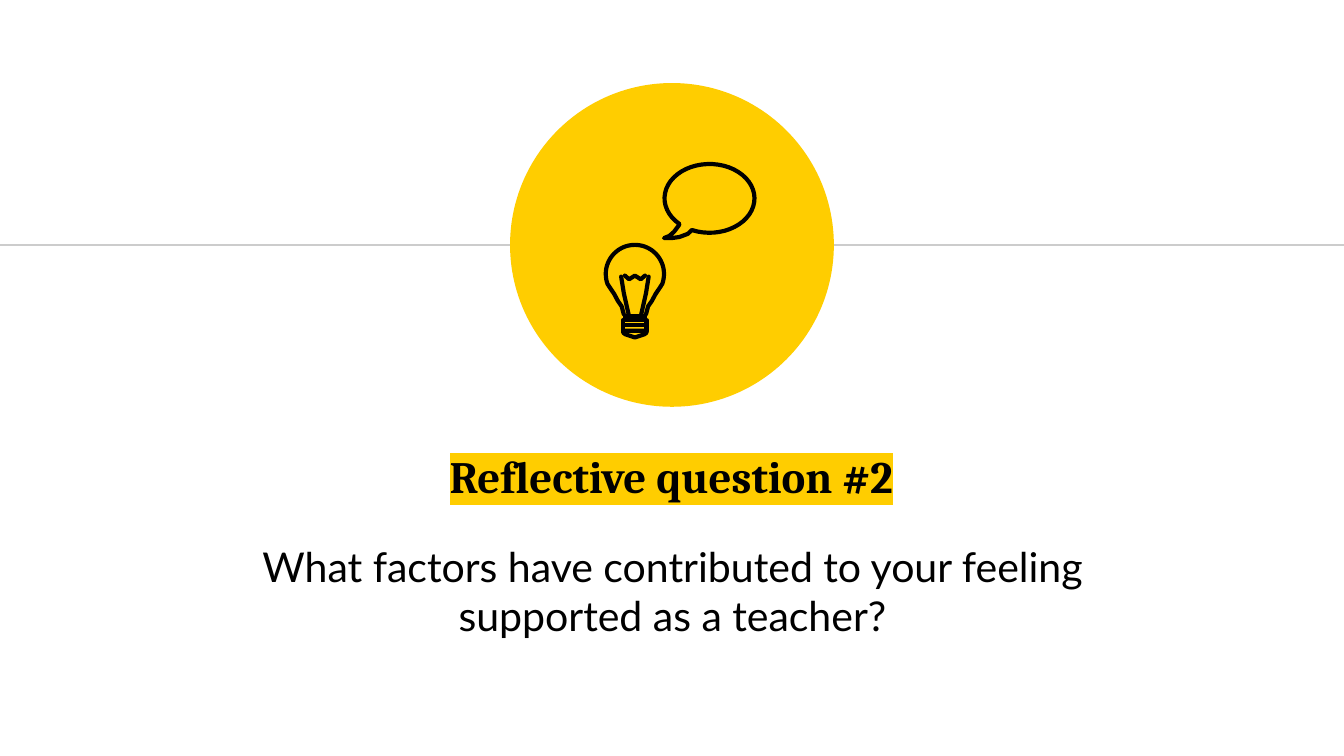
from math import cos, radians, sin

from lxml.etree import SubElement
from pptx import Presentation
from pptx.dml.color import RGBColor
from pptx.enum.shapes import MSO_CONNECTOR, MSO_SHAPE
from pptx.enum.text import MSO_ANCHOR, MSO_AUTO_SIZE, PP_ALIGN
from pptx.oxml.ns import qn
from pptx.util import Cm, Pt

YELLOW = RGBColor(0xFF, 0xCD, 0x00)
BLACK = RGBColor(0x00, 0x00, 0x00)
GREY = RGBColor(0xCC, 0xCC, 0xCC)
CENTRE = 12.7
RULE_TOP = 4.63
BULB_AXIS = 12.0


def arc(centre, radii, first, last, steps=48):
    """Return points along an elliptical arc, with angles in degrees."""
    angles = [radians(first + (last - first) * step / steps) for step in range(steps + 1)]
    return [(centre[0] + radii[0] * cos(angle), centre[1] + radii[1] * sin(angle))
            for angle in angles]


def place(half):
    """Move points given as offsets from the bulb axis onto the slide."""
    return [(BULB_AXIS + offset, top) for offset, top in half]


def mirror(half):
    """Return the points reflected in the bulb axis, in reverse order."""
    return [(-offset, top) for offset, top in reversed(half)]


class SlideBuilder:
    """Holds the style and the current slide."""

    def __init__(self, deck):
        self.slide = deck.slides.add_slide(deck.slide_layouts[0])
        self.shapes = self.slide.shapes

    def text(self, box, area, words, font, size, anchor, bold=False, highlight=None):
        box.left, box.top, box.width, box.height = map(Cm, area)
        frame = box.text_frame
        frame.text = words
        frame.word_wrap = True
        frame.auto_size = MSO_AUTO_SIZE.NONE
        frame.vertical_anchor = anchor
        frame.margin_left = frame.margin_right = Cm(0.25)
        frame.margin_top = frame.margin_bottom = Cm(0.25)
        para = frame.paragraphs[0]
        para.alignment = PP_ALIGN.CENTER
        para.space_before = Pt(0)
        span = para.runs[0]
        span.font.size = Pt(size)
        span.font.bold = bold
        span.font.color.rgb = BLACK
        if highlight:
            marker = SubElement(span.font._element, qn("a:highlight"))
            SubElement(marker, qn("a:srgbClr")).set("val", str(highlight))
        span.font.name = font

    def line(self, start, end, color, width, shapes=None):
        ends = map(Cm, (*start, *end))
        rule = (shapes or self.shapes).add_connector(MSO_CONNECTOR.STRAIGHT, *ends)
        rule.line.color.rgb = color
        rule.line.width = Pt(width)
        SubElement(rule._element.spPr, qn("a:effectLst"))

    def disc(self, centre, diameter, color):
        corner = [Cm(value - diameter / 2) for value in centre]
        disc = self.shapes.add_shape(MSO_SHAPE.OVAL, *corner, Cm(diameter), Cm(diameter))
        disc.shadow.inherit = False
        disc.fill.solid()
        disc.fill.fore_color.rgb = color
        disc.line.fill.background()

    def outline(self, points, close=False, shapes=None):
        corners = [(Cm(left), Cm(top)) for left, top in points]
        builder = (shapes or self.shapes).build_freeform(*corners[0])
        builder.add_line_segments(corners[1:], close=close)
        shape = builder.convert_to_shape()
        shape.shadow.inherit = False
        shape.fill.background()
        shape.line.color.rgb = BLACK
        shape.line.width = Pt(2.25)
        stroke = shape.line._get_or_add_ln()
        stroke.set("cap", "rnd")
        SubElement(stroke, qn("a:round"))

    def bubble(self):
        tail = [(13.0, 4.42), (12.84, 4.48), (12.7, 4.5), (12.55, 4.5),
                (12.65, 4.46), (12.74, 4.38), (12.83, 4.26)]
        self.outline(arc((13.41, 3.75), (0.85, 0.65), 132, 473) + tail, close=True)

    def bulb(self):
        shapes = self.shapes.add_group_shape().shapes
        for top in (6.15, 6.05):
            band = [(-0.22, top), (-0.22, top + 0.1)]
            self.outline(place(band + mirror(band)), True, shapes)
        cap = [(-0.22, 6.25), (-0.22, 6.29), (-0.18, 6.32), (0, 6.38)]
        self.outline(place(cap + mirror(cap[:-1])), True, shapes)
        side = [(-0.21, 5.94), (-0.25, 5.79), (-0.32, 5.69), (-0.39, 5.56), (-0.47, 5.44)]
        dome = arc((0, 5.18), (0.55, 0.55), 160, 380)
        self.outline(place(side + dome + mirror(side)), shapes=shapes)
        leg = [(-0.26, 5.23), (-0.21, 5.54), (-0.12, 5.94)]
        for half in (leg, mirror(leg)):
            self.outline(place(half), shapes=shapes)
        filament = [(-0.19, 5.21), (-0.11, 5.28), (0, 5.21)]
        self.outline(place(filament + mirror(filament[:-1])), shapes=shapes)
        self.line(*place([(-0.22, 5.97), (0.22, 5.97)]), BLACK, 2.25, shapes)


def main():
    deck = Presentation()
    deck.slide_width, deck.slide_height = Cm(25.4), Cm(14.29)
    page = SlideBuilder(deck)
    title, question = page.slide.placeholders
    page.text(title, (5.41, 7.7, 14.55, 2.57), "Reflective question #2",
              "Cambria", 24, MSO_ANCHOR.MIDDLE, bold=True, highlight=YELLOW)
    page.text(question, (4.29, 9.98, 16.84, 2.36),
              "What factors have contributed to your feeling supported as a teacher?",
              "Lato", 22, MSO_ANCHOR.TOP)
    page.line((0, RULE_TOP), (25.4, RULE_TOP), GREY, 0.75)
    page.disc((CENTRE, RULE_TOP), 6.12, YELLOW)
    page.bubble()
    page.bulb()
    deck.save("out.pptx")


if __name__ == "__main__":
    main()
